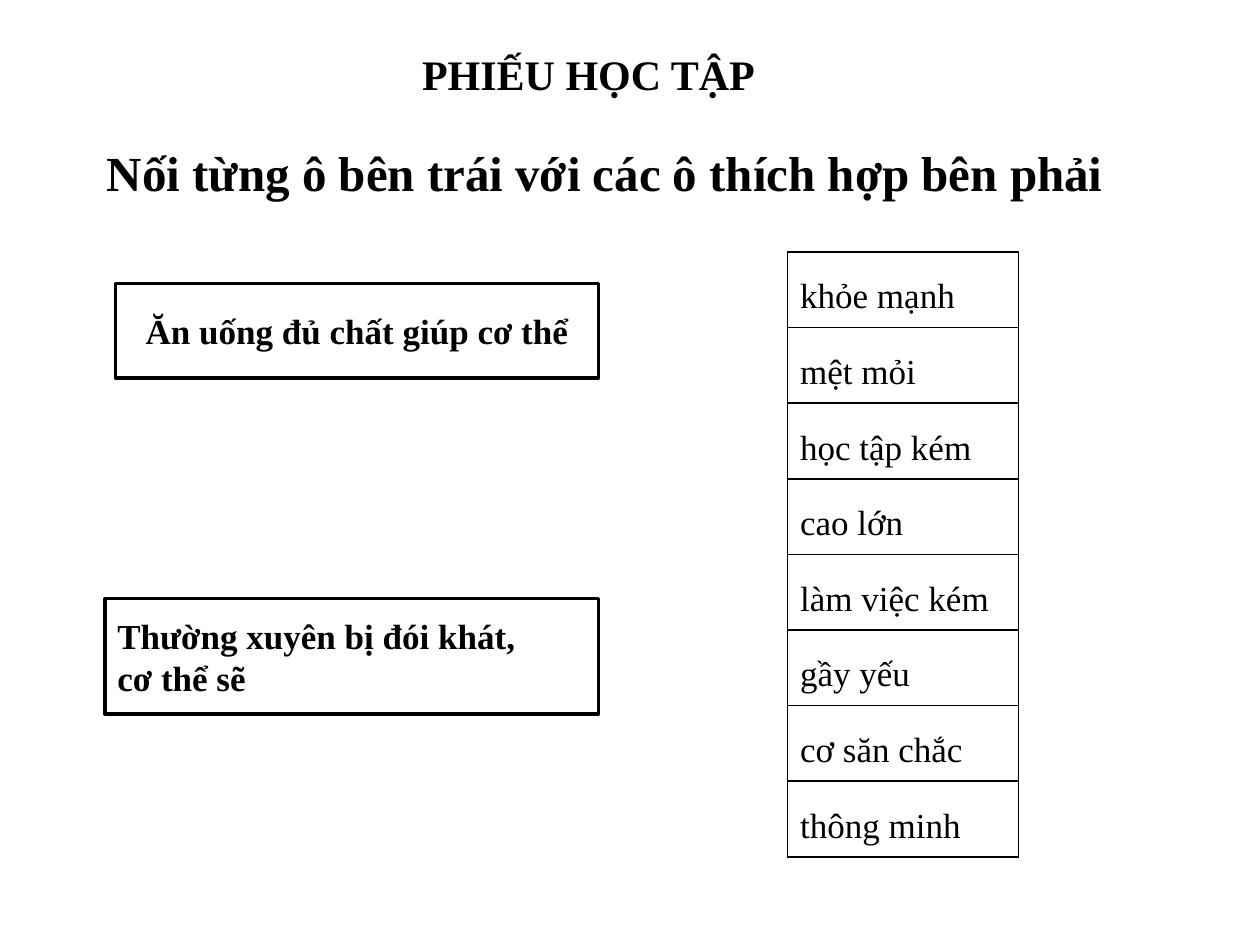
from lxml import etree
from pptx import Presentation
from pptx.dml.color import RGBColor
from pptx.enum.shapes import MSO_SHAPE
from pptx.enum.text import MSO_ANCHOR, MSO_AUTO_SIZE, PP_ALIGN
from pptx.oxml.ns import qn
from pptx.util import Pt

RECTANGLE = MSO_SHAPE.RECTANGLE
TOP, MIDDLE = MSO_ANCHOR.TOP, MSO_ANCHOR.MIDDLE
LEFT, CENTER = PP_ALIGN.LEFT, PP_ALIGN.CENTER
NO_AUTOFIT = MSO_AUTO_SIZE.NONE
TITLE_ONLY = 5
FONT, BLACK, WHITE = "Times New Roman", "000000", "FFFFFF"

# Places are left, top, width, height in points
heading = ("PHIẾU HỌC TẬP", (234, 24, 222, 36), 24)
instruction = ("Nối từng ô bên trái với các ô thích hợp bên phải", (54, 78, 630, 41), 28)
causes = [
    (["Ăn uống đủ chất giúp cơ thể"], (66, 162, 276, 54), CENTER),
    (["Thường xuyên bị đói khát,", "cơ thể sẽ"], (60, 342, 282, 66), LEFT),
]
effects = ["khỏe mạnh", "mệt mỏi", "học tập kém", "cao lớn",
           "làm việc kém", "gầy yếu", "cơ săn chắc", "thông minh"]
EFFECTS_LEFT, EFFECTS_TOP, EFFECTS_WIDTH, ROW_HEIGHT = 450, 144, 132, 43.2


def color(hex_code):
    return RGBColor.from_string(hex_code)


def points(place):
    return [Pt(length) for length in place]


def write(frame, lines, size, bold=True, align=LEFT, spacing=None):
    frame.text = "\n".join(lines)
    for paragraph in frame.paragraphs:
        paragraph.alignment = align
        paragraph.line_spacing = spacing
        font = paragraph.runs[0].font
        for attribute, value in {"name": FONT, "size": Pt(size), "bold": bold}.items():
            setattr(font, attribute, value)
        font.color.rgb = color(BLACK)


def set_frame(frame, anchor):
    for attribute, value in {"word_wrap": True, "auto_size": NO_AUTOFIT,
                             "vertical_anchor": anchor}.items():
        setattr(frame, attribute, value)


def add_borders(cell, width=1):
    properties = cell._tc.get_or_add_tcPr()
    for side in ("a:lnL", "a:lnR", "a:lnT", "a:lnB"):
        line = etree.SubElement(properties, qn(side), w=str(Pt(width)))
        fill = etree.SubElement(line, qn("a:solidFill"))
        etree.SubElement(fill, qn("a:srgbClr"), val=BLACK)


prs = Presentation()
prs.slide_width, prs.slide_height = Pt(720), Pt(540)
slide = prs.slides.add_slide(prs.slide_layouts[TITLE_ONLY])
shapes = slide.shapes

title = shapes.title
title.left, title.top, title.width, title.height = points(heading[1])
instruction_box = shapes.add_textbox(*points(instruction[1]))
for box, (text, _, size) in ((title, heading), (instruction_box, instruction)):
    set_frame(box.text_frame, TOP)
    write(box.text_frame, [text], size)

table = shapes.add_table(len(effects), 1, *points(
    (EFFECTS_LEFT, EFFECTS_TOP, EFFECTS_WIDTH, ROW_HEIGHT * len(effects)))).table
table.first_row = table.horz_banding = False
for row, effect in enumerate(effects):
    table.rows[row].height = Pt(ROW_HEIGHT)
    cell = table.cell(row, 0)
    write(cell.text_frame, [effect], 20, bold=False, spacing=1.5)
    add_borders(cell)
    cell.fill.background()

for lines, place, align in causes:
    cause = shapes.add_shape(RECTANGLE, *points(place))
    cause.shadow.inherit = False
    cause.fill.solid()
    cause.fill.fore_color.rgb = color(WHITE)
    cause.line.color.rgb = color(BLACK)
    cause.line.width = Pt(2)
    set_frame(cause.text_frame, MIDDLE)
    write(cause.text_frame, lines, 20, align=align)

prs.save("out.pptx")
